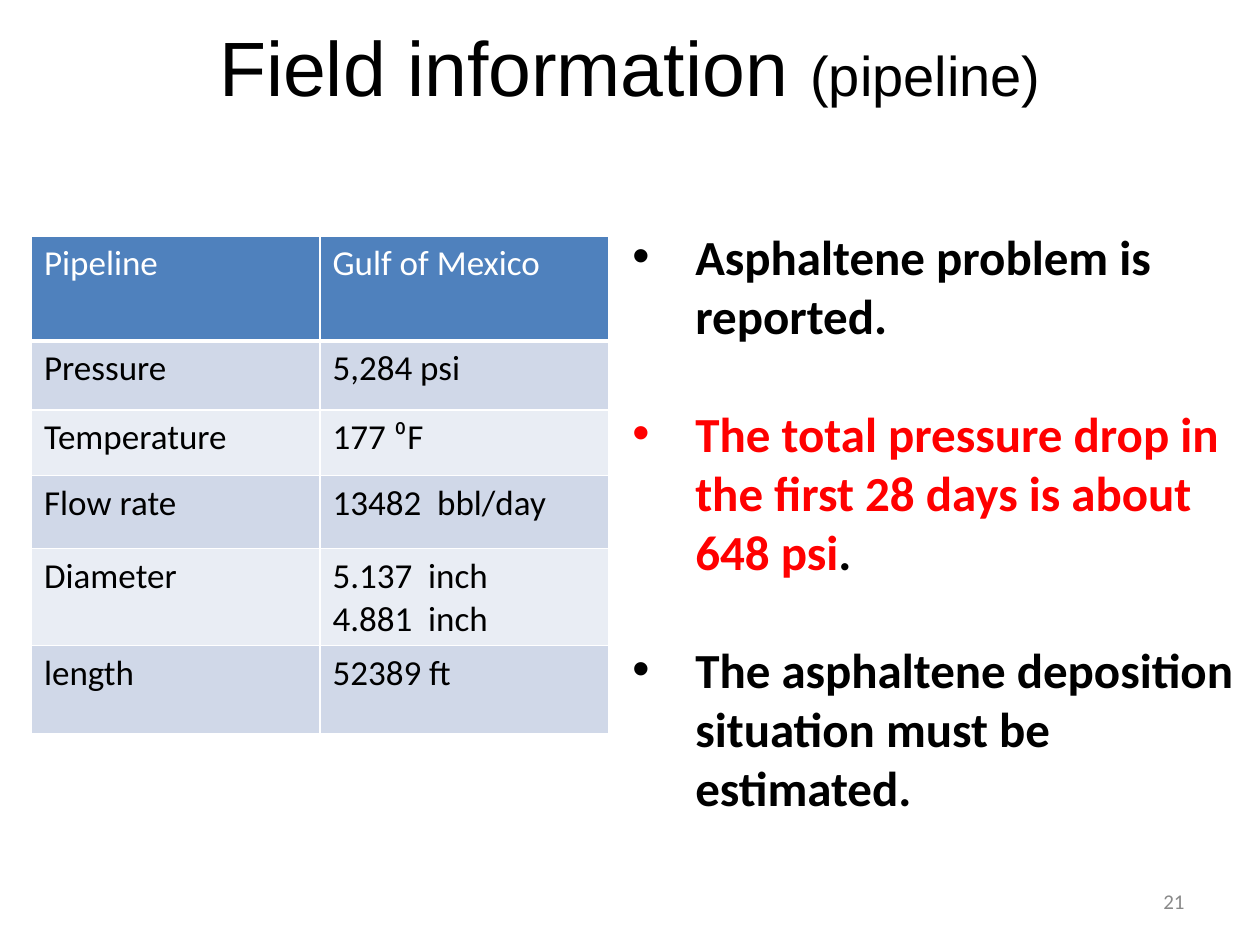
from lxml.etree import SubElement
from pptx import Presentation
from pptx.dml.color import RGBColor
from pptx.enum.text import MSO_ANCHOR, PP_ALIGN
from pptx.oxml.ns import qn
from pptx.util import Inches, Pt

WIDTH, HEIGHT = Inches(10), Inches(7.5)
BLACK = RGBColor(0x00, 0x00, 0x00)
WHITE = RGBColor(0xFF, 0xFF, 0xFF)
RED = RGBColor(0xFF, 0x00, 0x00)
GRAY = RGBColor(0x89, 0x89, 0x89)
HEADER_BLUE = RGBColor(0x4F, 0x81, 0xBD)
BAND_DARK = RGBColor(0xD0, 0xD8, 0xE8)
BAND_LIGHT = RGBColor(0xE9, 0xED, 0xF4)

PIPELINE_ROWS = [
    (0.83, "Pipeline", ["Gulf of Mexico"]),
    (0.55, "Pressure", ["5,284 psi"]),
    (0.52, "Temperature", ["177 ⁰F"]),
    (0.58, "Flow rate", ["13482  bbl/day"]),
    (0.7, "Diameter", ["5.137  inch", "4.881  inch"]),
    (0.7, "length", ["52389 ft"]),
]
FINDINGS = [
    [("Asphaltene problem is reported.", BLACK)],
    [("The total pressure drop in the first 28 days is about 648 psi", RED), (".", BLACK)],
    [("The asphaltene deposition situation must be estimated.", BLACK)],
]


def add_text(paragraph, text, size=20, font="Calibri", color=BLACK, bold=False):
    run = paragraph.add_run()
    run.text = text
    run.font.size = Pt(size)
    run.font.name = font
    run.font.color.rgb = color
    run.font.bold = bold


def add_box(slide, left, top, width, height, anchor=MSO_ANCHOR.TOP):
    shape = slide.shapes.add_textbox(
        int(WIDTH * left), int(HEIGHT * top), int(WIDTH * width), int(HEIGHT * height)
    )
    frame = shape.text_frame
    frame.word_wrap = True
    frame.vertical_anchor = anchor
    return frame


def next_paragraph(frame, index):
    return frame.add_paragraph() if index else frame.paragraphs[0]


def set_bullet(paragraph):
    properties = paragraph._p.get_or_add_pPr()
    properties.set("marL", str(Inches(0.5)))
    properties.set("indent", str(-Inches(0.5)))
    SubElement(properties, qn("a:buFont"), typeface="Arial")
    SubElement(properties, qn("a:buChar"), char="•")


def set_borders(cell, bottom_width):
    properties = cell._tc.get_or_add_tcPr()
    for side, width in (("L", 1), ("R", 1), ("T", 1), ("B", bottom_width)):
        line = SubElement(properties, qn(f"a:ln{side}"), w=str(Pt(width)))
        fill = SubElement(line, qn("a:solidFill"))
        SubElement(fill, qn("a:srgbClr"), val=str(WHITE))


def fill_cell(cell, lines, fill, color, bottom_width):
    set_borders(cell, bottom_width)
    cell.fill.solid()
    cell.fill.fore_color.rgb = fill
    for index, line in enumerate(lines):
        add_text(next_paragraph(cell.text_frame, index), line, color=color)


def add_title(slide):
    frame = add_box(slide, 0.05, 0, 0.9, 0.14, MSO_ANCHOR.MIDDLE)
    paragraph = frame.paragraphs[0]
    paragraph.alignment = PP_ALIGN.CENTER
    add_text(paragraph, "Field information ", size=44, font="Arial")
    add_text(paragraph, "(pipeline)", size=32, font="Arial")


def add_pipeline_table(slide):
    height = Inches(sum(row[0] for row in PIPELINE_ROWS))
    table = slide.shapes.add_table(
        len(PIPELINE_ROWS), 2, int(WIDTH * 0.025), int(HEIGHT * 0.25), int(WIDTH * 0.458), height
    ).table
    for index, (row_height, label, values) in enumerate(PIPELINE_ROWS):
        table.rows[index].height = Inches(row_height)
        if index == 0:
            fill, color, bottom_width = HEADER_BLUE, WHITE, 3
        else:
            fill = BAND_DARK if index % 2 else BAND_LIGHT
            color, bottom_width = BLACK, 1
        for column, lines in enumerate(([label], values)):
            fill_cell(table.cell(index, column), lines, fill, color, bottom_width)


def add_findings(slide):
    frame = add_box(slide, 0.492, 0.233, 0.508, 0.64)
    for index, parts in enumerate(FINDINGS):
        paragraph = next_paragraph(frame, index)
        set_bullet(paragraph)
        if index:
            paragraph.space_before = Pt(34)
        for text, color in parts:
            add_text(paragraph, text, size=28, color=color, bold=True)


def add_page_number(slide):
    frame = add_box(slide, 0.717, 0.927, 0.233, 0.053, MSO_ANCHOR.MIDDLE)
    frame.paragraphs[0].alignment = PP_ALIGN.RIGHT
    add_text(frame.paragraphs[0], "21", size=12, color=GRAY)


def main():
    presentation = Presentation()
    presentation.slide_width, presentation.slide_height = WIDTH, HEIGHT
    slide = presentation.slides.add_slide(presentation.slide_layouts[6])
    add_page_number(slide)
    add_findings(slide)
    add_pipeline_table(slide)
    add_title(slide)
    presentation.save("out.pptx")


if __name__ == "__main__":
    main()
